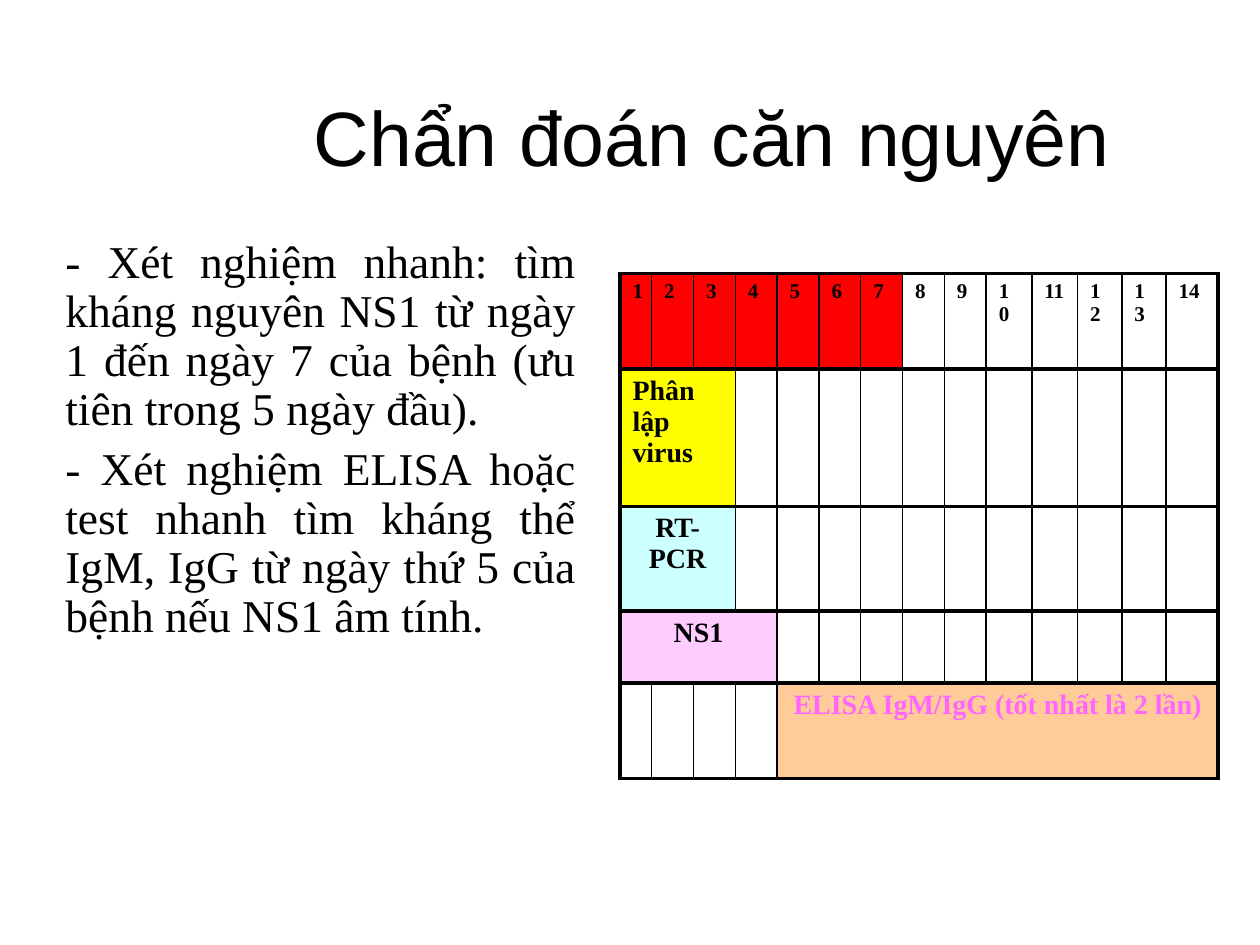
from dataclasses import dataclass

from lxml import etree
from pptx import Presentation
from pptx.dml.color import RGBColor
from pptx.enum.text import MSO_ANCHOR, PP_ALIGN
from pptx.oxml.ns import qn
from pptx.util import Inches, Pt

LEFT, CENTER, JUSTIFY = PP_ALIGN.LEFT, PP_ALIGN.CENTER, PP_ALIGN.JUSTIFY
TOP, MIDDLE = MSO_ANCHOR.TOP, MSO_ANCHOR.MIDDLE


@dataclass(frozen=True)
class Theme:
    sans: str = "Arial"
    serif: str = "Times New Roman"
    black: str = "000000"
    red: str = "FF0000"
    yellow: str = "FFFF00"
    cyan: str = "CCFFFF"
    pink: str = "FFCCFF"
    orange: str = "FFCC99"
    rose: str = "FF66FF"
    title: float = 44
    body: float = 26
    label: float = 16
    day: float = 12
    thin: float = 1
    thick: float = 2.25


@dataclass(frozen=True)
class Style:
    font: str
    size: float
    color: str
    bold: bool = False
    align: PP_ALIGN = LEFT


@dataclass(frozen=True)
class Test:
    text: str
    row: int
    first: int
    last: int
    fill: str
    style: Style


THEME = Theme()
HEAD = Style(THEME.sans, THEME.title, THEME.black)
BODY = Style(THEME.serif, THEME.body, THEME.black, align=JUSTIFY)
DAY = Style(THEME.serif, THEME.day, THEME.black, True)
NAME = Style(THEME.serif, THEME.label, THEME.black, True)
MID = Style(THEME.serif, THEME.label, THEME.black, True, CENTER)
ROSE = Style(THEME.serif, THEME.label, THEME.rose, True, CENTER)

NOTES = [
    "- Xét nghiệm nhanh: tìm kháng nguyên NS1 từ ngày 1 đến ngày 7 "
    "của bệnh (ưu tiên trong 5 ngày đầu).",
    "- Xét nghiệm ELISA hoặc test nhanh tìm kháng thể IgM, IgG "
    "từ ngày thứ 5 của bệnh nếu NS1 âm tính.",
]

# Days each test covers, first and last
TESTS = [
    Test("Phân lập virus", 1, 1, 3, THEME.yellow, NAME),
    Test("RT-PCR", 2, 1, 3, THEME.cyan, MID),
    Test("NS1", 3, 1, 4, THEME.pink, MID),
    Test("ELISA IgM/IgG (tốt nhất là 2 lần)", 4, 5, 14, THEME.orange, ROSE),
]
DAYS = 14
FEVER = 7
WIDTH = 4.75
COLS = [0.25] + [0.33] * 8 + [0.36] * 2 + [0.35] * 2 + [0.41]
ROWS = [0.76, 1.09, 0.83, 0.57, 0.76]


def write(frame, lines: list[str], style: Style) -> None:
    for i, line in enumerate(lines):
        para = frame.paragraphs[0] if i == 0 else frame.add_paragraph()
        para.text = line
        para.alignment = style.align
        font = para.font
        font.name, font.size, font.bold = style.font, Pt(style.size), style.bold
        font.color.rgb = RGBColor.from_string(style.color)


def add_text(slide, box: tuple, lines: list[str], style: Style,
             anchor: MSO_ANCHOR = TOP, before: float = 0):
    frame = slide.shapes.add_textbox(*map(Inches, box)).text_frame
    frame.word_wrap = True
    frame.vertical_anchor = anchor
    write(frame, lines, style)
    for para in frame.paragraphs:
        para.line_spacing = 0.9
        para.space_before = Pt(before)
    return frame


def add_edge(cell, side: str, points: float) -> None:
    props = cell._tc.get_or_add_tcPr()
    line = etree.SubElement(props, qn(f"a:ln{side}"), w=str(Pt(points)))
    fill = etree.SubElement(line, qn("a:solidFill"))
    etree.SubElement(fill, qn("a:srgbClr"), val=THEME.black)


def draw_edges(cell, col: int) -> None:
    end = col + (cell.span_width if cell.is_merge_origin else 1)
    if not cell.is_spanned:
        add_edge(cell, "L", THEME.thick if col == 0 else THEME.thin)
        add_edge(cell, "R", THEME.thick if end == DAYS else THEME.thin)
    for side in "TB":
        add_edge(cell, side, THEME.thick)


def paint(cell, color: str) -> None:
    cell.fill.solid()
    cell.fill.fore_color.rgb = RGBColor.from_string(color)


def add_chart_table(slide) -> None:
    box = map(Inches, (4.92, 2.17, WIDTH, sum(ROWS)))
    table = slide.shapes.add_table(len(ROWS), DAYS, *box).table
    table.first_row = table.horz_banding = False
    for col, width in zip(table.columns, COLS):
        col.width = Inches(width * WIDTH / sum(COLS))
    for row, height in zip(table.rows, ROWS):
        row.height = Inches(height)

    # Merge first, so that edges follow the spans
    for test in TESTS:
        start = table.cell(test.row, test.first - 1)
        start.merge(table.cell(test.row, test.last - 1))
    for row in range(len(ROWS)):
        for col in range(DAYS):
            cell = table.cell(row, col)
            draw_edges(cell, col)
            cell.fill.background()

    # Day numbers, then the bar of each test
    for day in range(1, DAYS + 1):
        cell = table.cell(0, day - 1)
        write(cell.text_frame, [str(day)], DAY)
        if day <= FEVER:
            paint(cell, THEME.red)
    for test in TESTS:
        cell = table.cell(test.row, test.first - 1)
        write(cell.text_frame, [test.text], test.style)
        paint(cell, test.fill)


def main() -> None:
    deck = Presentation()
    deck.slide_width, deck.slide_height = Inches(10), Inches(7.5)
    slide = deck.slides.add_slide(deck.slide_layouts[6])

    # Title, set in from the left
    title = add_text(slide, (0.69, 0.4, 8.62, 1.45),
                     ["Chẩn đoán căn nguyên"], HEAD, MIDDLE)
    title.margin_left = Inches(1.8)

    add_text(slide, (0.42, 1.85, 4.25, 4.76), NOTES, BODY, before=6)
    add_chart_table(slide)
    deck.save("out.pptx")


if __name__ == "__main__":
    main()
